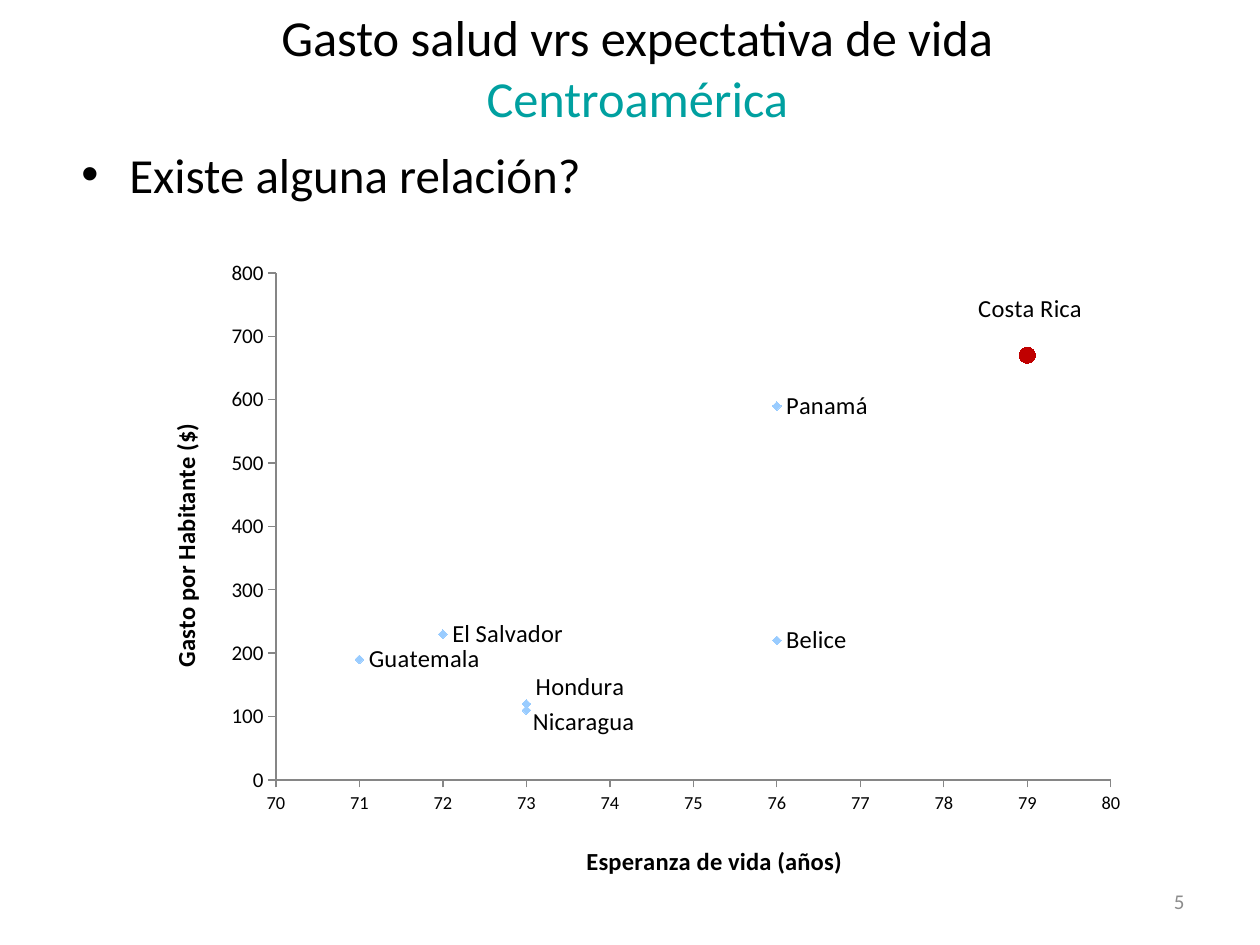
from dataclasses import dataclass

from lxml import etree
from pptx import Presentation
from pptx.chart.data import XyChartData
from pptx.dml.color import RGBColor
from pptx.enum.chart import XL_CHART_TYPE, XL_LABEL_POSITION, XL_MARKER_STYLE, XL_TICK_MARK
from pptx.enum.text import MSO_ANCHOR, PP_ALIGN
from pptx.oxml.ns import qn
from pptx.util import Emu, Pt

EMU_PER_INCH = 914400
PX_PER_INCH = 126
CHART_WIDTH = 984
CHART_HEIGHT = 640
FONT = "Calibri"
CHART_EXTENSION_NS = "http://schemas.microsoft.com/office/drawing/2012/chart"
LABEL_EXTENSION_URI = "{CE6537A1-D6FC-4f65-9D91-7224C49458BB}"
BLACK = RGBColor(0x00, 0x00, 0x00)
TEAL = RGBColor(0x00, 0xA0, 0xA0)
GRAY = RGBColor(0x8C, 0x8C, 0x8C)
AXIS_GRAY = RGBColor(0x86, 0x86, 0x86)
LIGHT_BLUE = RGBColor(0x99, 0xCC, 0xFF)
RED = RGBColor(0xC0, 0x00, 0x00)
SCATTER = XL_CHART_TYPE.XY_SCATTER
LABEL_RIGHT = XL_LABEL_POSITION.RIGHT
DIAMOND = XL_MARKER_STYLE.DIAMOND
CIRCLE = XL_MARKER_STYLE.CIRCLE
TICK_OUTSIDE = XL_TICK_MARK.OUTSIDE
TICK_NONE = XL_TICK_MARK.NONE
TOP, MIDDLE = MSO_ANCHOR.TOP, MSO_ANCHOR.MIDDLE
LEFT, CENTER, RIGHT = PP_ALIGN.LEFT, PP_ALIGN.CENTER, PP_ALIGN.RIGHT


@dataclass(frozen=True)
class Line:
    text: str
    size: float
    color: RGBColor = BLACK


@dataclass(frozen=True)
class Country:
    name: str
    life_expectancy: int
    spending: int
    label_shift: tuple[int, int] | None = None


@dataclass(frozen=True)
class AxisSpec:
    title: str
    title_place: tuple[int, int]
    minimum: int
    maximum: int
    step: int
    tick_size: float


COUNTRIES = [
    Country("Guatemala", 71, 190),
    Country("El Salvador", 72, 230),
    Country("Hondura", 73, 120, (0, -17)),
    Country("Nicaragua", 73, 110, (-3, 12)),
    Country("Belice", 76, 220),
    Country("Panamá", 76, 590),
    Country("Costa Rica", 79, 670, (-62, -46)),
]
HIGHLIGHT = "Costa Rica"
LIFE_AXIS = AxisSpec("Esperanza de vida (años)", (435, 594), 70, 80, 1, 10.5)
SPENDING_AXIS = AxisSpec("Gasto por Habitante ($)", (17, 173), 0, 800, 100, 12)


def px(length: int) -> Emu:
    return Emu(round(length * EMU_PER_INCH / PX_PER_INCH))


def add_lines(slide, box: tuple[int, int, int, int], lines: list[Line],
              align, anchor, inset_top: int = 6):
    frame = slide.shapes.add_textbox(*map(px, box)).text_frame
    frame.word_wrap = True
    frame.vertical_anchor = anchor
    frame.margin_top = px(inset_top)
    for index, line in enumerate(lines):
        paragraph = frame.paragraphs[0] if index == 0 else frame.add_paragraph()
        paragraph.text = line.text
        paragraph.alignment = align
        paragraph.font.name = FONT
        paragraph.font.size = Pt(line.size)
        paragraph.font.color.rgb = line.color
    return frame


def add_bullet(paragraph, indent: int) -> None:
    properties = paragraph._p.get_or_add_pPr()
    properties.set("marL", str(px(indent)))
    properties.set("indent", str(-px(indent)))
    bullet_font = etree.Element(qn("a:buFont"), typeface="Arial")
    bullet = etree.Element(qn("a:buChar"), char="•")
    position = 0 if properties.find(qn("a:defRPr")) is not None else len(properties)
    properties.insert(position, bullet_font)
    properties.insert(position + 1, bullet)


def set_layout(parent, index: int, modes: dict[str, str], **lengths: int) -> None:
    for old_layout in parent.findall(qn("c:layout")):
        parent.remove(old_layout)
    layout = etree.Element(qn("c:layout"))
    manual = etree.SubElement(layout, qn("c:manualLayout"))
    for key, mode in modes.items():
        etree.SubElement(manual, qn(f"c:{key}"), val=mode)
    for key, length in lengths.items():
        extent = CHART_WIDTH if key in "xw" else CHART_HEIGHT
        etree.SubElement(manual, qn(f"c:{key}"), val=f"{length / extent:.4f}")
    parent.insert(index, layout)


def style_axis(axis, spec: AxisSpec) -> None:
    axis.minimum_scale = spec.minimum
    axis.maximum_scale = spec.maximum
    axis.major_unit = spec.step
    axis.has_major_gridlines = False
    axis.major_tick_mark = TICK_OUTSIDE
    axis.minor_tick_mark = TICK_NONE
    axis.format.line.color.rgb = AXIS_GRAY
    axis.format.line.width = Pt(0.75)
    axis.tick_labels.font.size = Pt(spec.tick_size)
    axis.tick_labels.number_format = "General"
    axis.tick_labels.number_format_is_linked = False
    title = axis.axis_title
    title.text_frame.text = spec.title
    font = title.text_frame.paragraphs[0].font
    font.name = FONT
    font.size = Pt(14)
    font.bold = True
    font.color.rgb = BLACK
    x, y = spec.title_place
    set_layout(title._element, 1, {"xMode": "edge", "yMode": "edge"}, x=x, y=y)


def style_marker(marker, style, size: int, color: RGBColor) -> None:
    marker.style = style
    marker.size = size
    marker.format.fill.solid()
    marker.format.fill.fore_color.rgb = color
    marker.format.line.color.rgb = color


def label_country(series, index: int, country: Country) -> None:
    label = series.points[index].data_label
    label.text_frame.text = country.name
    font = label.text_frame.paragraphs[0].font
    font.name = FONT
    font.size = Pt(14)
    font.color.rgb = BLACK
    label.position = LABEL_RIGHT
    if country.label_shift:
        x, y = country.label_shift
        set_layout(label._dLbl, 1, {}, x=x, y=y)


def hide_leader_lines(series) -> None:
    labels = series._element.find(qn("c:dLbls"))
    for leader_lines in labels.findall(qn("c:showLeaderLines")):
        leader_lines.set("val", "0")
    extensions = etree.SubElement(labels, qn("c:extLst"))
    extension = etree.SubElement(extensions, qn("c:ext"), uri=LABEL_EXTENSION_URI)
    etree.SubElement(extension, f"{{{CHART_EXTENSION_NS}}}showLeaderLines",
                     nsmap={"c15": CHART_EXTENSION_NS}, val="0")


def add_spending_chart(slide) -> None:
    data = XyChartData()
    points = data.add_series("Series 1")
    for country in COUNTRIES:
        points.add_data_point(country.life_expectancy, country.spending)
    box = (147, 246, CHART_WIDTH, CHART_HEIGHT)
    chart = slide.shapes.add_chart(SCATTER, *map(px, box), data).chart
    chart.has_legend = False
    chart.has_title = False
    chart.font.name = FONT
    chart.font.size = Pt(10)
    chart.font.color.rgb = BLACK
    chart.plots[0].vary_by_categories = False
    style_axis(chart.category_axis, LIFE_AXIS)
    style_axis(chart.value_axis, SPENDING_AXIS)
    set_layout(chart._chartSpace.chart.plotArea, 0,
               {"layoutTarget": "inner", "xMode": "edge", "yMode": "edge"},
               x=129, y=27, w=835, h=507)
    series = chart.plots[0].series[0]
    series.format.line.fill.background()
    style_marker(series.marker, DIAMOND, 5, LIGHT_BLUE)
    for index, country in enumerate(COUNTRIES):
        label_country(series, index, country)
        if country.name == HIGHLIGHT:
            style_marker(series.points[index].marker, CIRCLE, 9, RED)
    hide_leader_lines(series)


def main() -> None:
    presentation = Presentation()
    presentation.slide_width = px(1260)
    presentation.slide_height = px(945)
    slide = presentation.slides.add_slide(presentation.slide_layouts[6])
    add_lines(slide, (59, 7, 1157, 120), [
        Line("Gasto salud vrs expectativa de vida", 28.8),
        Line("Centroamérica", 28.8, TEAL),
    ], CENTER, MIDDLE)
    question = add_lines(slide, (69, 137, 1134, 94),
                         [Line("Existe alguna relación?", 28)], LEFT, TOP, 7)
    add_bullet(question.paragraphs[0], 48)
    add_lines(slide, (903, 876, 294, 50), [Line("5", 12, GRAY)], RIGHT, MIDDLE)
    add_spending_chart(slide)
    presentation.save("out.pptx")


if __name__ == "__main__":
    main()
